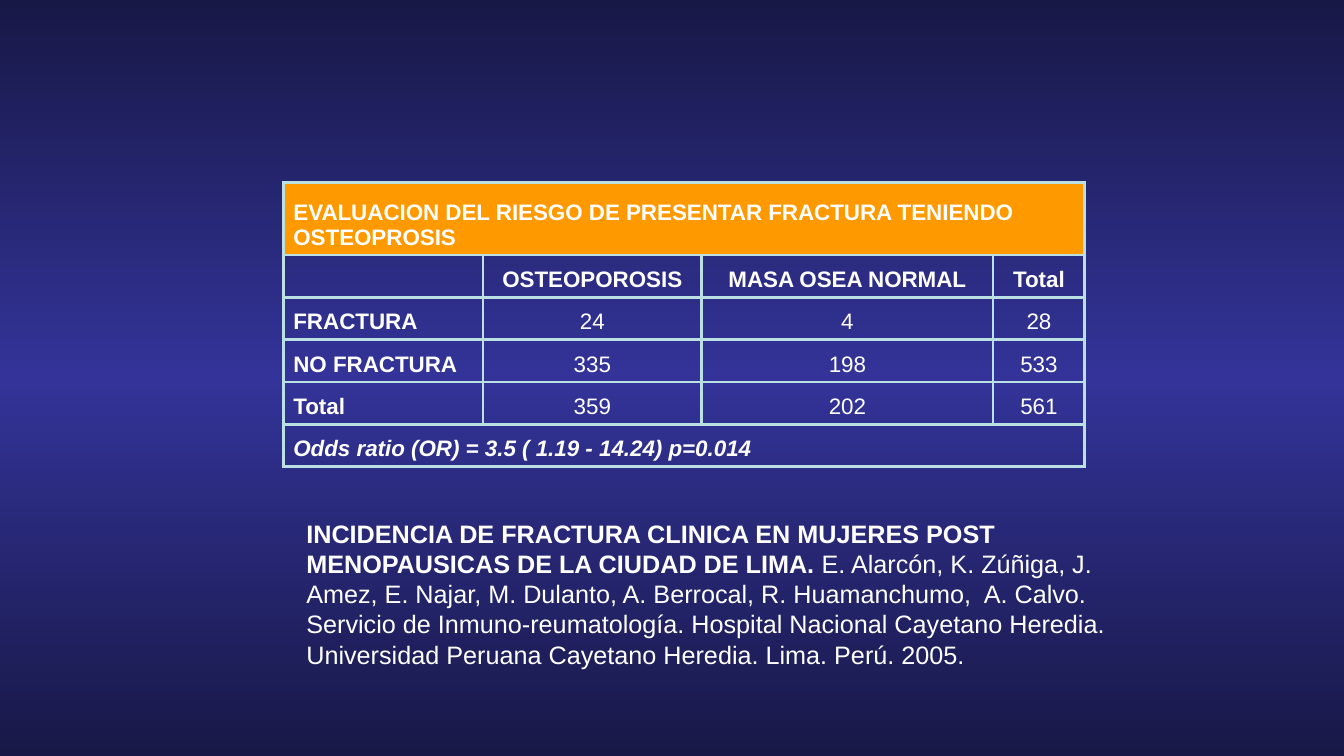
from copy import deepcopy
from dataclasses import dataclass

from lxml.etree import SubElement
from pptx import Presentation
from pptx.dml.color import RGBColor
from pptx.enum.text import MSO_ANCHOR, PP_ALIGN
from pptx.oxml.ns import qn
from pptx.slide import Slide
from pptx.table import Table, _Cell
from pptx.text.text import Font
from pptx.util import Inches, Pt

WHITE = "FFFFFF"
ORANGE = "FF9900"
BORDER = "BBE0E3"
WIDTHS = [1.98, 2.17, 2.89, 0.91]
HEIGHTS = [0.72] + [0.42] * 5
STOPS = [(0, "181847"), (0.5, "333399"), (1, "181847")]


@dataclass
class Row:
    texts: list[str]
    bold: bool = False
    italic: bool = False
    fill: str = ""


ROWS = [
    Row(["EVALUACION DEL RIESGO DE PRESENTAR FRACTURA TENIENDO OSTEOPROSIS"],
        bold=True, fill=ORANGE),
    Row(["", "OSTEOPOROSIS", "MASA OSEA NORMAL", "Total"], bold=True),
    Row(["FRACTURA", "24", "4", "28"]),
    Row(["NO FRACTURA", "335", "198", "533"]),
    Row(["Total", "359", "202", "561"]),
    Row(["Odds ratio (OR) = 3.5 ( 1.19 - 14.24) p=0.014"], bold=True, italic=True),
]
TITLE = ("INCIDENCIA DE FRACTURA CLINICA EN MUJERES POST MENOPAUSICAS "
         "DE LA CIUDAD DE LIMA.")
SOURCE = (" E. Alarcón, K. Zúñiga, J. Amez, E. Najar, M. Dulanto, A. Berrocal, "
          "R. Huamanchumo,  A. Calvo. Servicio de Inmuno-reumatología. "
          "Hospital Nacional Cayetano Heredia. Universidad Peruana Cayetano "
          "Heredia. Lima. Perú. 2005.")


def color(code: str) -> RGBColor:
    return RGBColor.from_string(code)


def style(font: Font, size: int) -> None:
    font.name = "Arial"
    font.size = Pt(size)
    font.color.rgb = color(WHITE)


def paint(slide: Slide) -> None:
    fill = slide.background.fill
    fill.gradient()
    fill.gradient_angle = 90
    stops = slide.element.find(".//" + qn("a:gsLst"))
    stops.insert(1, deepcopy(stops[0]))
    for stop, (place, code) in zip(fill.gradient_stops, STOPS):
        stop.position = place
        stop.color.rgb = color(code)


def border(cell: _Cell) -> None:
    props = cell._tc.get_or_add_tcPr()
    for side in ("lnL", "lnR", "lnT", "lnB"):
        line = SubElement(props, qn(f"a:{side}"), w=str(Pt(2.25)))
        solid = SubElement(line, qn("a:solidFill"))
        SubElement(solid, qn("a:srgbClr"), val=BORDER)


def fill_row(table: Table, index: int, row: Row) -> None:
    cells = [table.cell(index, col) for col in range(len(WIDTHS))]
    for cell in cells:
        border(cell)
        if row.fill:
            cell.fill.solid()
            cell.fill.fore_color.rgb = color(row.fill)
        else:
            cell.fill.background()
    if len(row.texts) == 1:
        cells[0].merge(cells[-1])
    for col, (cell, text) in enumerate(zip(cells, row.texts)):
        cell.text = text
        cell.vertical_anchor = MSO_ANCHOR.BOTTOM
        para = cell.text_frame.paragraphs[0]
        para.alignment = PP_ALIGN.CENTER if col else PP_ALIGN.LEFT
        style(para.font, 16)
        para.font.bold = row.bold or col == 0
        para.font.italic = row.italic


def add_risk(slide: Slide) -> None:
    table = slide.shapes.add_table(
        len(ROWS), len(WIDTHS), Inches(2.81), Inches(1.81),
        Inches(sum(WIDTHS)), Inches(sum(HEIGHTS))).table
    table.first_row = False
    table.horz_banding = False
    for column, width in zip(table.columns, WIDTHS):
        column.width = Inches(width)
    for line, height in zip(table.rows, HEIGHTS):
        line.height = Inches(height)
    for index, row in enumerate(ROWS):
        fill_row(table, index, row)


def add_source(slide: Slide) -> None:
    box = slide.shapes.add_textbox(
        Inches(2.94), Inches(5.09), Inches(8.13), Inches(1.6))
    frame = box.text_frame
    frame.word_wrap = True
    para = frame.paragraphs[0]
    style(para.font, 18)
    for text, bold in ((TITLE, True), (SOURCE, False)):
        run = para.add_run()
        run.text = text
        run.font.bold = bold


def main() -> None:
    deck = Presentation()
    deck.slide_width = Inches(13.33)
    deck.slide_height = Inches(7.5)
    slide = deck.slides.add_slide(deck.slide_layouts[6])
    paint(slide)
    add_risk(slide)
    add_source(slide)
    deck.save("out.pptx")


if __name__ == "__main__":
    main()
